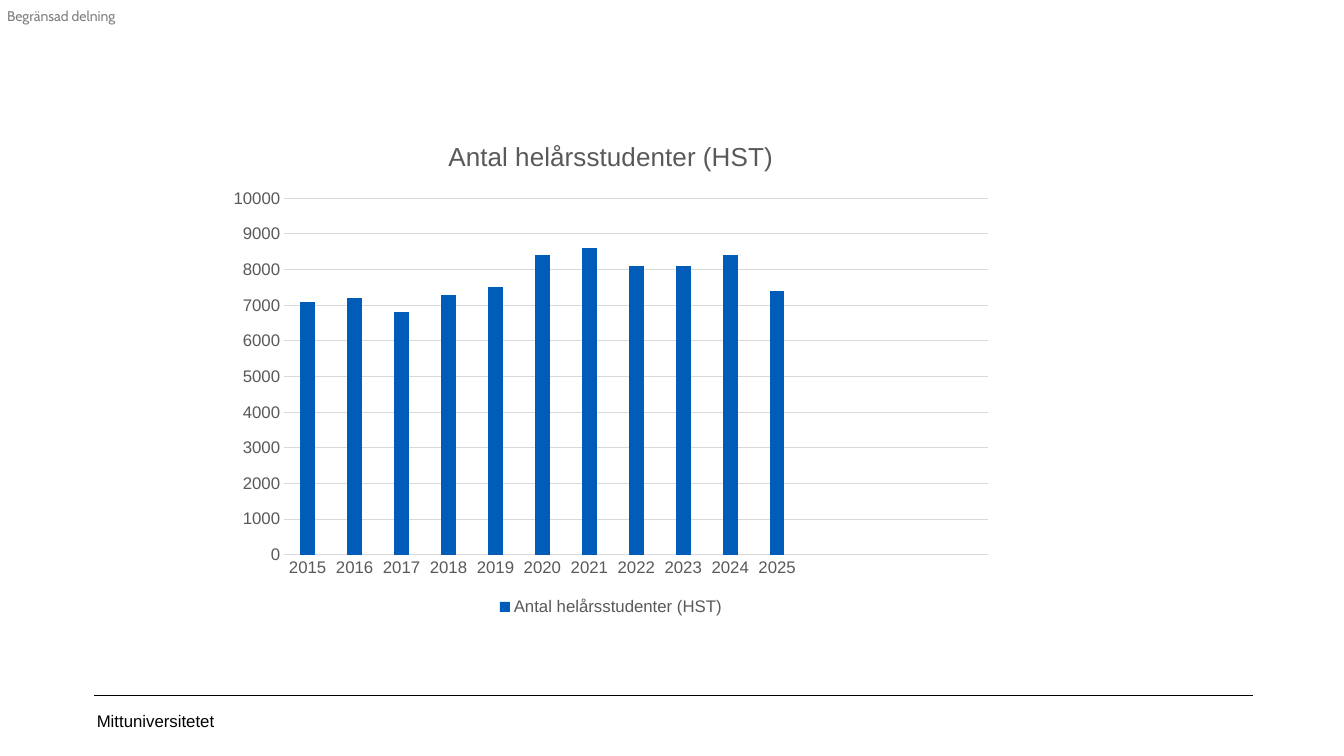
from pptx import Presentation
from pptx.chart.data import CategoryChartData
from pptx.dml.color import RGBColor
from pptx.enum.chart import XL_CHART_TYPE, XL_LEGEND_POSITION, XL_TICK_MARK
from pptx.enum.shapes import MSO_CONNECTOR
from pptx.enum.text import MSO_ANCHOR
from pptx.oxml.ns import qn
from pptx.util import Inches, Pt
from lxml import etree

COLUMNS = XL_CHART_TYPE.COLUMN_CLUSTERED
BOTTOM = XL_LEGEND_POSITION.BOTTOM
NO_TICK = XL_TICK_MARK.NONE
STRAIGHT = MSO_CONNECTOR.STRAIGHT
TOP, MIDDLE = MSO_ANCHOR.TOP, MSO_ANCHOR.MIDDLE

COLORS = {"ink": "000000", "label": "7F7F7F", "text": "595959",
          "grid": "D9D9D9", "bar": "005CB9"}
SLIDE_WIDTH, SLIDE_HEIGHT = 13.33, 7.5
SERIES_NAME = "Antal helårsstudenter (HST)"
FIRST_YEAR = 2015
STUDENTS = [7100, 7200, 6800, 7300, 7500, 8400, 8600, 8100, 8100, 8400, 7400]
EMPTY_SLOTS = 4


def color(name):
    return RGBColor.from_string(COLORS[name])


def style_font(font, size, name, face="Arial"):
    font.size = Pt(size)
    font.name = face
    font.bold = False
    font.color.rgb = color(name)


def style_line(line, name, width):
    line.color.rgb = color(name)
    line.width = Pt(width)


def add_label(page, area, text, size, name, face, anchor, insets):
    box = page.shapes.add_textbox(*map(Inches, area))
    frame = box.text_frame
    frame.text = text
    frame.word_wrap = True
    frame.vertical_anchor = anchor
    left, top, right, bottom = map(Inches, insets)
    frame.margin_left, frame.margin_top = left, top
    frame.margin_right, frame.margin_bottom = right, bottom
    style_font(frame.paragraphs[0].runs[0].font, size, name, face)


def add_sharing_label(page, area):
    add_label(page, area, "Begränsad delning", 10, "label", "Cabin", TOP, (0, 0, 0, 0))


def add_footer(page, area):
    left, top, width, height = area
    rule = page.shapes.add_connector(
        STRAIGHT, Inches(left), Inches(top), Inches(left + width), Inches(top))
    style_line(rule.line, "ink", 0.25)
    etree.SubElement(rule._element.spPr, qn("a:effectLst"))
    add_label(page, (left - 0.01, top + 0.05, 3, height - 0.05), "Mittuniversitetet",
              12, "ink", "Arial", MIDDLE, (0.04, 0.05, 0.1, 0.05))


def style_axis(axis):
    axis.major_tick_mark = NO_TICK
    axis.minor_tick_mark = NO_TICK
    style_font(axis.tick_labels.font, 12, "text")


def add_student_chart(page, area):
    data = CategoryChartData()
    years = [str(FIRST_YEAR + index) for index in range(len(STUDENTS))]
    data.categories = years + [""] * EMPTY_SLOTS
    data.add_series(SERIES_NAME, STUDENTS + [None] * EMPTY_SLOTS)
    chart = page.shapes.add_chart(COLUMNS, *map(Inches, area), data).chart
    style_font(chart.font, 10, "ink")

    chart.has_title = True
    title = chart.chart_title
    title.include_in_layout = False
    title.text_frame.text = SERIES_NAME
    style_font(title.text_frame.paragraphs[0].runs[0].font, 18.6, "text")

    chart.has_legend = True
    chart.legend.position = BOTTOM
    chart.legend.include_in_layout = False
    style_font(chart.legend.font, 12, "text")

    style_axis(chart.category_axis)
    style_line(chart.category_axis.format.line, "grid", 0.75)
    values = chart.value_axis
    style_axis(values)
    values.minimum_scale, values.maximum_scale, values.major_unit = 0, 10000, 1000
    values.format.line.fill.background()
    values.has_major_gridlines = True
    style_line(values.major_gridlines.format.line, "grid", 0.75)

    plot = chart.plots[0]
    plot.gap_width = 219
    plot.overlap = -27
    plot.vary_by_categories = False
    bars = plot.series[0].format.fill
    bars.solid()
    bars.fore_color.rgb = color("bar")


def main():
    deck = Presentation()
    deck.slide_width = Inches(SLIDE_WIDTH)
    deck.slide_height = Inches(SLIDE_HEIGHT)
    page = deck.slides.add_slide(deck.slide_layouts[6])
    add_footer(page, (0.93, 6.9, 11.5, 0.45))
    add_sharing_label(page, (0.07, 0.07, 1.14, 0.17))
    add_student_chart(page, (2.16, 1.18, 7.8, 4.97))
    deck.save("out.pptx")


if __name__ == "__main__":
    main()
